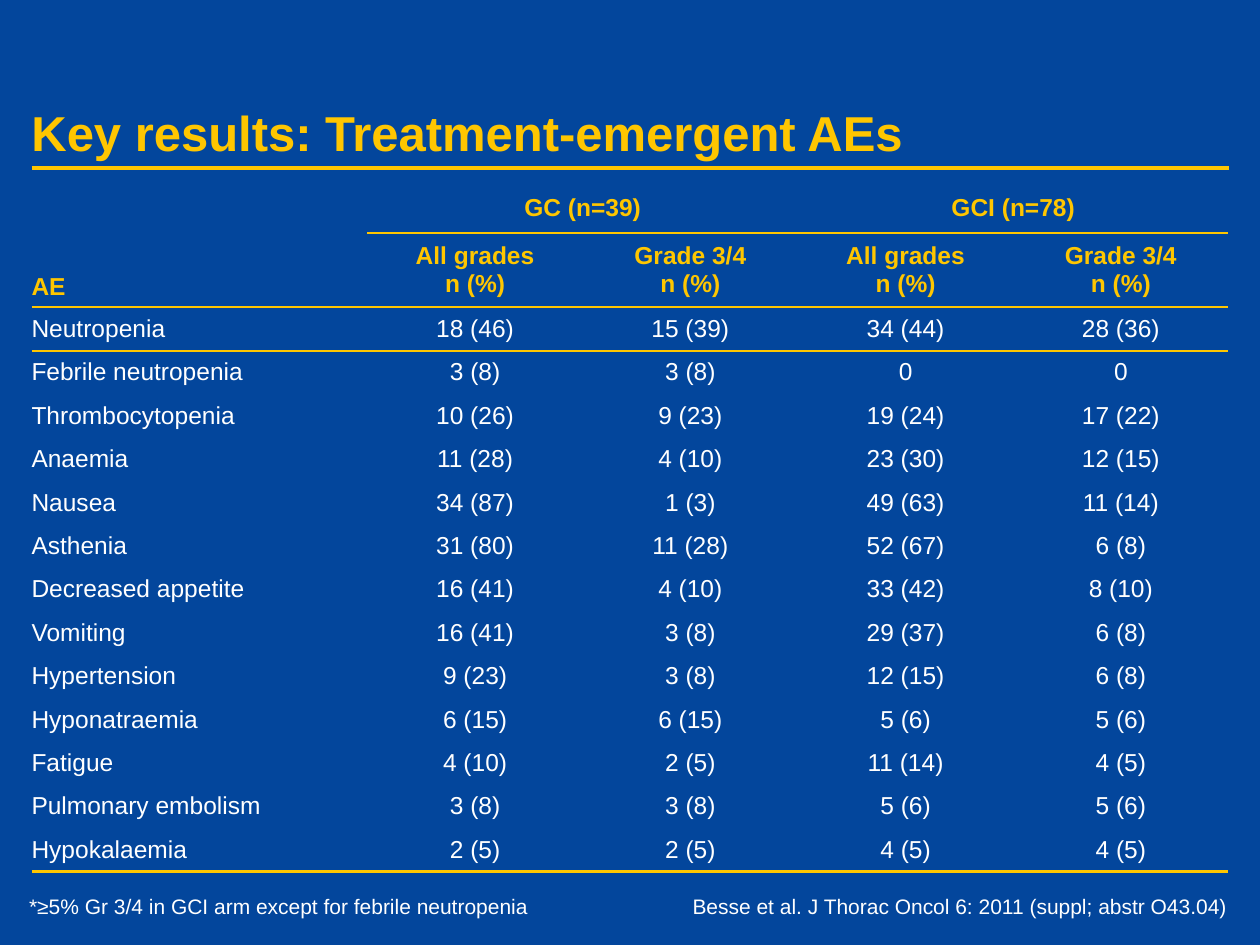
import pptx
import pptx.dml.color
import pptx.enum.shapes
import pptx.enum.text
import pptx.oxml
import pptx.oxml.ns
import pptx.util

Pt = pptx.util.Pt
ALIGN = pptx.enum.text.PP_ALIGN
ANCHOR = pptx.enum.text.MSO_ANCHOR
COLORS = {"background": "03469C", "gold": "FFC600", "white": "FFFFFF"}
FONT = "Arial"
NO_GRID_STYLE = "{2D5ABB26-0587-4C30-8999-92F81FD0307C}"

# Table content
ARMS = ["GC (n=39)", "GCI (n=78)"]
HEADINGS = ["AE"] + ["All grades\vn (%)", "Grade 3/4\vn (%)"] * len(ARMS)
EVENTS = [
    ["Neutropenia", "18 (46)", "15 (39)", "34 (44)", "28 (36)"],
    ["Febrile neutropenia", "3 (8)", "3 (8)", "0", "0"],
    ["Thrombocytopenia", "10 (26)", "9 (23)", "19 (24)", "17 (22)"],
    ["Anaemia", "11 (28)", "4 (10)", "23 (30)", "12 (15)"],
    ["Nausea", "34 (87)", "1 (3)", "49 (63)", "11 (14)"],
    ["Asthenia", "31 (80)", "11 (28)", "52 (67)", "6 (8)"],
    ["Decreased appetite", "16 (41)", "4 (10)", "33 (42)", "8 (10)"],
    ["Vomiting", "16 (41)", "3 (8)", "29 (37)", "6 (8)"],
    ["Hypertension", "9 (23)", "3 (8)", "12 (15)", "6 (8)"],
    ["Hyponatraemia", "6 (15)", "6 (15)", "5 (6)", "5 (6)"],
    ["Fatigue", "4 (10)", "2 (5)", "11 (14)", "4 (5)"],
    ["Pulmonary embolism", "3 (8)", "3 (8)", "5 (6)", "5 (6)"],
    ["Hypokalaemia", "2 (5)", "2 (5)", "4 (5)", "4 (5)"],
]


def rgb(name):
    return pptx.dml.color.RGBColor.from_string(COLORS[name])


def add_text(para, text, size, color, bold=False, align=ALIGN.LEFT):
    para.alignment = align
    for index, line in enumerate(text.split("\v")):
        if index:
            para.add_line_break()
        span = para.add_run()
        span.text = line
        span.font.name = FONT
        span.font.size = Pt(size)
        span.font.bold = bold
        span.font.color.rgb = rgb(color)


def add_box(page, place, margins, anchor=ANCHOR.TOP):
    """Add a wrapping text box and return its first paragraph."""
    box = page.shapes.add_textbox(*(Pt(value) for value in place))
    frame = box.text_frame
    frame.word_wrap = True
    frame.vertical_anchor = anchor
    (frame.margin_left, frame.margin_top,
     frame.margin_right, frame.margin_bottom) = (Pt(value) for value in margins)
    return frame.paragraphs[0]


def add_rule(page, left, right, top):
    rule = page.shapes.add_connector(
        pptx.enum.shapes.MSO_CONNECTOR.STRAIGHT, Pt(left), Pt(top), Pt(right), Pt(top))
    rule.line.color.rgb = rgb("gold")
    rule.line.width = Pt(2.25)
    properties = rule._element.spPr
    properties.append(properties.makeelement(pptx.oxml.ns.qn("a:effectLst"), {}))


def add_border(cell, side):
    border = pptx.oxml.parse_xml(
        f'<a:{side} {pptx.oxml.ns.nsdecls("a")} w="{Pt(1.5)}"><a:solidFill>'
        f'<a:srgbClr val="{COLORS["gold"]}"/></a:solidFill></a:{side}>')
    cell._tc.get_or_add_tcPr().insert(0, border)


def fill_cell(cell, text, column, header=False):
    first = column == 0
    cell.vertical_anchor = ANCHOR.BOTTOM if first and header else ANCHOR.MIDDLE
    cell.margin_left = Pt(0 if first else 3.6)
    cell.margin_right = cell.margin_top = cell.margin_bottom = Pt(3.6)
    add_text(cell.text_frame.paragraphs[0], text, 14, "gold" if header else "white",
             header, ALIGN.LEFT if first else ALIGN.CENTER)


def add_event_table(page):
    rows, columns = len(EVENTS) + 2, len(HEADINGS)
    frame = page.shapes.add_table(rows, columns, Pt(18), Pt(104.4), Pt(684), Pt(390))
    table = frame.table
    table.first_row = table.horz_banding = False
    frame._element.find(".//" + pptx.oxml.ns.qn("a:tableStyleId")).text = NO_GRID_STYLE
    for index, column in enumerate(table.columns):
        column.width = Pt(123 if index else 192)
    for index, row in enumerate(table.rows):
        row.height = Pt(42.4 if index == 1 else 24.83)
    for cell in table.iter_cells():
        cell.fill.background()

    # Treatment arms, each over two columns
    for index, arm in enumerate(ARMS):
        left = 1 + 2 * index
        table.cell(0, left).merge(table.cell(0, left + 1))
        fill_cell(table.cell(0, left), arm, left, header=True)

    # Column headings and events
    for row, texts in enumerate([HEADINGS] + EVENTS, start=1):
        for column, text in enumerate(texts):
            fill_cell(table.cell(row, column), text, column, header=row == 1)

    # Gold rules below the arms, the headings and the last event
    for row, start in ((0, 1), (1, 0), (rows - 1, 0)):
        for column in range(start, columns):
            add_border(table.cell(row, column), "lnB")
    for row, start in ((1, 1), (2, 0)):
        for column in range(start, columns):
            add_border(table.cell(row, column), "lnT")


def main():
    deck = pptx.Presentation()
    deck.slide_width, deck.slide_height = Pt(720), Pt(540)
    page = deck.slides.add_slide(deck.slide_layouts[6])
    page.background.fill.solid()
    page.background.fill.fore_color.rgb = rgb("background")

    # Title and its rule
    add_rule(page, 18, 702, 96)
    title = add_box(page, (18, 18, 684, 74.2), (0, 3.6, 0, 0), ANCHOR.BOTTOM)
    add_text(title, "Key results: Treatment-emergent AEs", 28, "gold", bold=True)

    add_event_table(page)

    # Footnote and citation
    footnote = add_box(page, (16.6, 506.9, 342, 22.3), (0, 3.6, 0, 3.6))
    add_text(footnote, "*≥5% Gr 3/4 in GCI arm except for febrile neutropenia", 12, "white")
    citation = add_box(page, (365.8, 506.9, 342.7, 22.3), (7.2, 3.6, 7.2, 3.6))
    add_text(citation, "Besse et al. J Thorac Oncol 6: 2011 (suppl; abstr O43.04)",
             12, "white", align=ALIGN.RIGHT)
    for para in (footnote, citation):
        para.space_before = Pt(2.4)

    deck.save("out.pptx")


if __name__ == "__main__":
    main()
